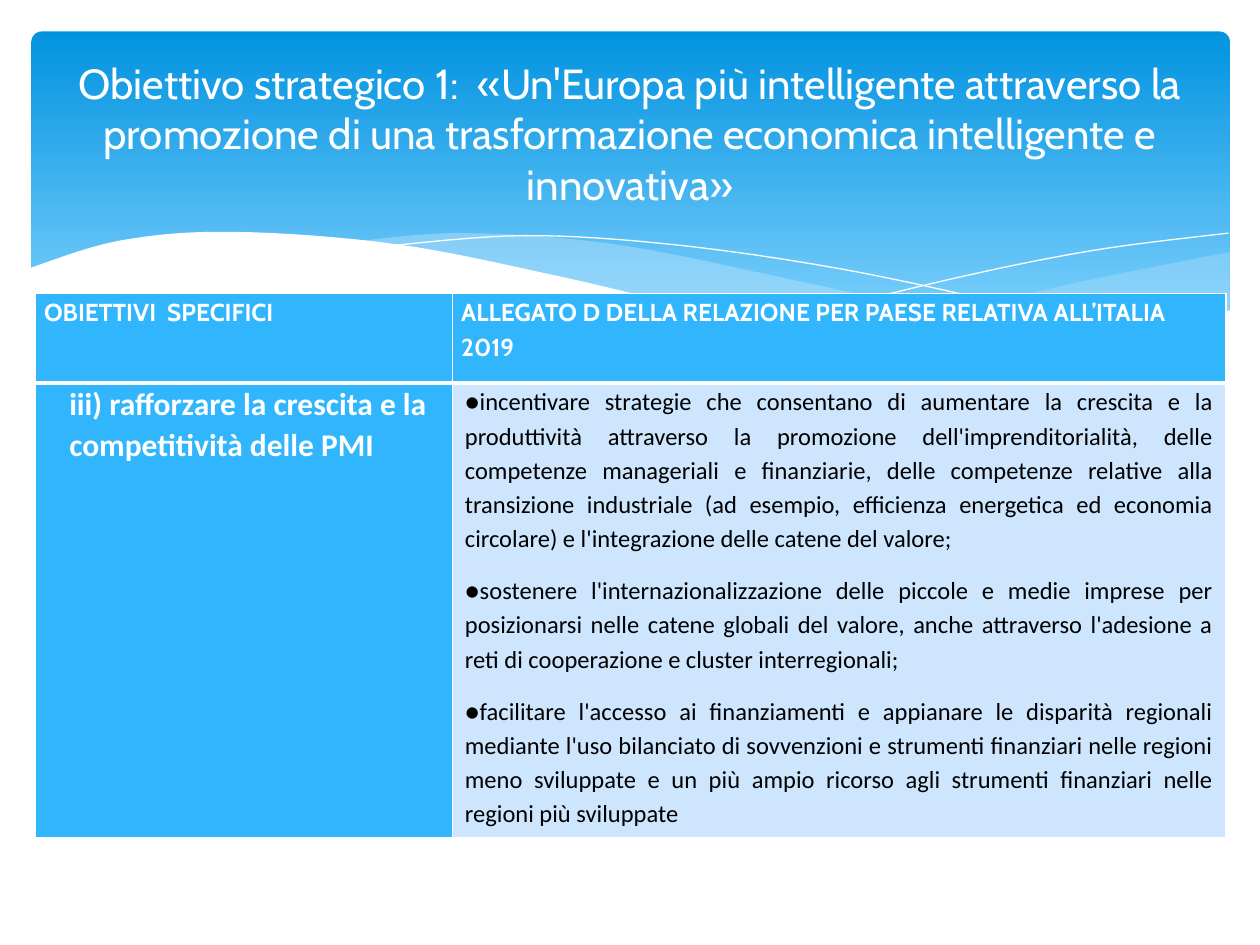
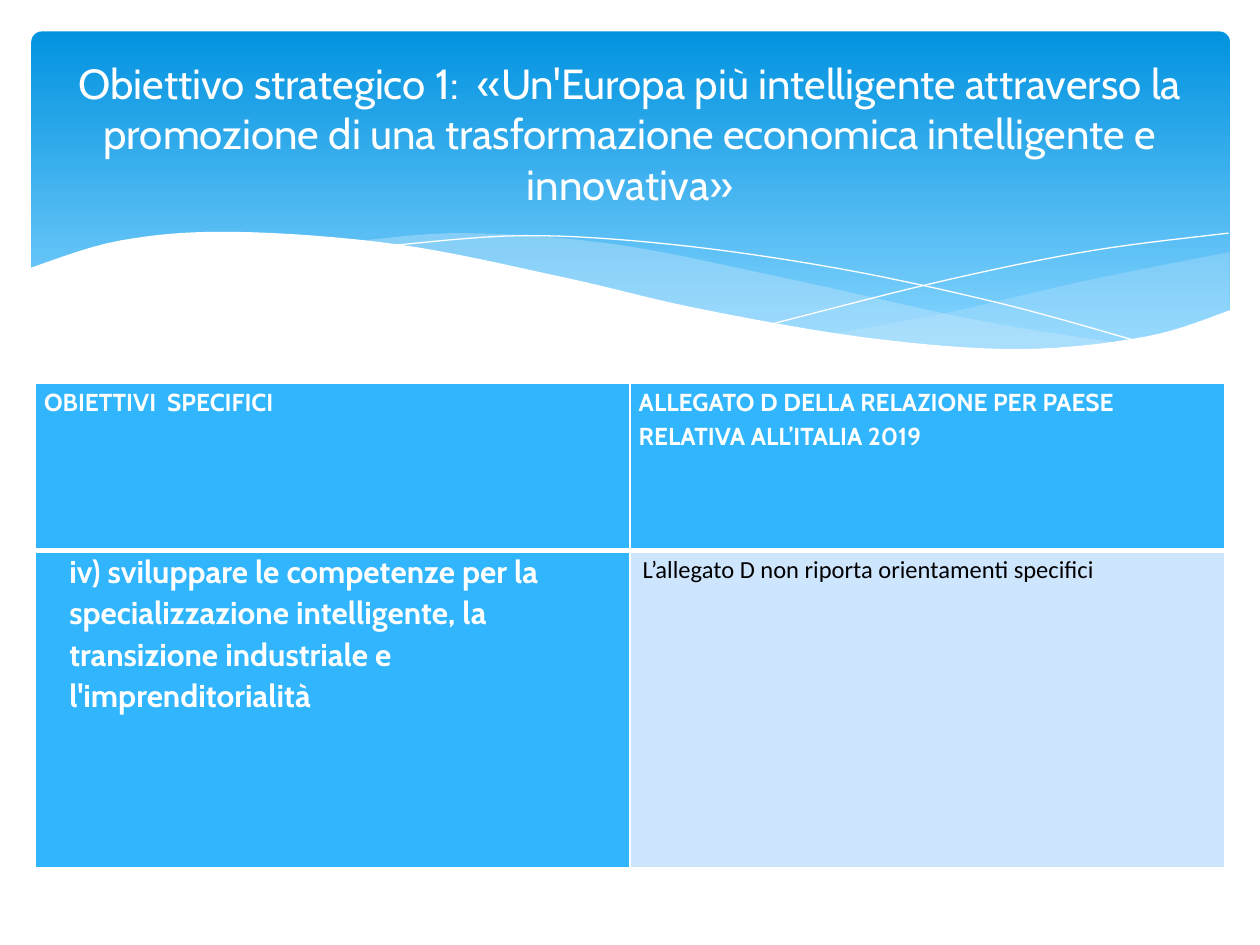
import dataclasses
import typing

import lxml.etree
import pptx
import pptx.dml.color
import pptx.enum.shapes
import pptx.enum.text
import pptx.oxml.ns
import pptx.slide
import pptx.util

Inches = pptx.util.Inches
Pt = pptx.util.Pt
qn = pptx.oxml.ns.qn
ALIGN = pptx.enum.text.PP_ALIGN
Spot = tuple[float, float]

WHITE, BLACK = "FFFFFF", "000000"
BLUE, PALE, MIST = "31B6FD", "CEE5FE", "C6E7FC"
DEEP, SKY = "0293E0", "83D3FE"
HEAD_FONT, BODY_FONT = "Cabin", "Calibri"
TITLE = ("Obiettivo strategico 1:  «Un'Europa più intelligente attraverso la "
         "promozione di una trasformazione economica intelligente e innovativa»")
HEADS = ("OBIETTIVI  SPECIFICI",
         "ALLEGATO D DELLA RELAZIONE PER PAESE RELATIVA ALL’ITALIA 2019")


@dataclasses.dataclass(frozen=True)
class Wave:
    points: list[Spot]
    fill: str | None = None
    alpha: int = 100


@dataclasses.dataclass(frozen=True)
class Style:
    size: int
    font: str
    color: str
    bold: bool = False
    align: typing.Any = ALIGN.LEFT
    space: float = 1.0
    after: int = 0


@dataclasses.dataclass(frozen=True)
class Look:
    style: Style
    fill: str
    left: float
    right: float
    top: int
    bottom: int


@dataclasses.dataclass(frozen=True)
class Page:
    top: float
    cols: Spot
    rows: Spot
    goal: str
    goal_font: str
    notes: tuple[str, ...]


def curve(*knots: Spot, steps: int = 8) -> list[Spot]:
    ends = (knots[0], *knots, knots[-1])
    spots = [knots[0]]
    for a, b, c, d in zip(ends, ends[1:], ends[2:], ends[3:]):
        for step in range(1, steps + 1):
            t = step / steps
            x, y = (q + t / 2 * (r - p + t * (2 * p - 5 * q + 4 * r - s
                                              + t * (3 * (q - r) + s - p)))
                    for p, q, r, s in zip(a, b, c, d))
            spots.append((x, y))
    return spots


EDGE = curve((9.77, 2.46), (9.1, 2.67), (8.09, 2.77), (6.88, 2.68), (5.55, 2.45),
             (4.47, 2.2), (3.16, 1.94), (1.85, 1.84), (0.95, 1.91), (0.23, 2.13))


def veil(*knots: Spot) -> list[Spot]:
    hem = [spot for spot in reversed(EDGE) if knots[-1][0] < spot[0] < knots[0][0]]
    return curve(*knots) + hem


WAVES = (
    Wave([(9.76, 2.47)] + veil((9.76, 2), (8.61, 2.23), (7.53, 2.48), (6.61, 2.65)),
         MIST, 29),
    Wave(veil((8.93, 2.73), (7.75, 2.54), (6.29, 2.22), (4.89, 1.94), (3.7, 1.85),
              (2.86, 1.91)), MIST, 40),
    Wave(curve((3.09, 1.95), (4.16, 1.87), (5.33, 1.94), (6.65, 2.13),
               (7.95, 2.41), (9.07, 2.72))),
    Wave(curve((6.13, 2.57), (7.48, 2.23), (8.66, 1.99), (9.75, 1.85))),
    Wave(EDGE + [(0.23, 3.29), (9.77, 3.29)], WHITE),
)

TITLE_STYLE = Style(24, HEAD_FONT, WHITE, align=ALIGN.CENTER)
HEAD = Look(Style(14, HEAD_FONT, WHITE, True, space=1.15), BLUE, 0.07, 0.07, 1, 3)
GOAL = Look(Style(18, BODY_FONT, WHITE, True, space=1.07, after=8),
            BLUE, 0.27, 0.07, 3, 1)
NOTE = Look(Style(14, BODY_FONT, BLACK, align=ALIGN.JUSTIFY, space=1.15, after=10),
            PALE, 0.1, 0.1, 3, 1)

PAGES = (
    Page(2.33, (3.31, 6.14), (0.71, 3.61),
         "iii) rafforzare la crescita e la competitività delle PMI", BODY_FONT,
         ("●incentivare strategie che consentano di aumentare la crescita e la "
          "produttività attraverso la promozione dell'imprenditorialità, delle "
          "competenze manageriali e finanziarie, delle competenze relative alla "
          "transizione industriale (ad esempio, efficienza energetica ed economia "
          "circolare) e l'integrazione delle catene del valore;",
          "●sostenere l'internazionalizzazione delle piccole e medie imprese per "
          "posizionarsi nelle catene globali del valore, anche attraverso "
          "l'adesione a reti di cooperazione e cluster interregionali;",
          "●facilitare l'accesso ai finanziamenti e appianare le disparità "
          "regionali mediante l'uso bilanciato di sovvenzioni e strumenti "
          "finanziari nelle regioni meno sviluppate e un più ampio ricorso agli "
          "strumenti finanziari nelle regioni più sviluppate")),
    Page(3.04, (4.72, 4.72), (1.33, 2.52),
         "iv) sviluppare le competenze per la specializzazione intelligente, la "
         "transizione industriale e l'imprenditorialità", HEAD_FONT,
         ("L’allegato D non riporta orientamenti specifici",)),
)


def tint(code: str) -> pptx.dml.color.RGBColor:
    return pptx.dml.color.RGBColor.from_string(code)


def put(item: typing.Any, values: dict[str, typing.Any]) -> None:
    for name, value in values.items():
        setattr(item, name, value)


def paint(item: typing.Any, code: str) -> None:
    item.fill.solid()
    item.fill.fore_color.rgb = tint(code)


def write(frame: typing.Any, texts: typing.Sequence[str], style: Style) -> None:
    frame.text = "\n".join(texts)
    for para in frame.paragraphs:
        put(para, {"alignment": style.align, "line_spacing": style.space,
                   "space_before": Pt(0), "space_after": Pt(style.after)})
        for run in para.runs:
            put(run.font, {"size": Pt(style.size), "name": style.font,
                           "bold": style.bold})
            run.font.color.rgb = tint(style.color)


def draw_band(slide: pptx.slide.Slide) -> None:
    band = slide.shapes.add_shape(
        pptx.enum.shapes.MSO_SHAPE.ROUNDED_RECTANGLE,
        Inches(0.25), Inches(0.25), Inches(9.51), Inches(2.7))
    band.adjustments[0] = 0.03
    band.shadow.inherit = False
    band.line.fill.background()
    band.fill.gradient()
    band.fill.gradient_angle = 270
    for stop, code, place in zip(band.fill.gradient_stops, (DEEP, SKY), (0, 0.9)):
        stop.color.rgb = tint(code)
        stop.position = place


def draw_wave(slide: pptx.slide.Slide, wave: Wave) -> None:
    spots = [(Inches(x), Inches(y)) for x, y in wave.points]
    pen = slide.shapes.build_freeform(*spots[0])
    pen.add_line_segments(spots[1:], close=wave.fill is not None)
    shape = pen.convert_to_shape()
    shape.shadow.inherit = False
    if wave.fill is None:
        shape.fill.background()
        shape.line.color.rgb = tint(WHITE)
        shape.line.width = Pt(0)
        return
    paint(shape, wave.fill)
    shape.line.fill.background()
    if wave.alpha < 100:
        color = shape.element.spPr.find(qn("a:solidFill")).find(qn("a:srgbClr"))
        lxml.etree.SubElement(color, qn("a:alpha"), val=str(wave.alpha * 1000))


def share_back(slide: pptx.slide.Slide, layout: pptx.slide.SlideLayout) -> None:
    for holder in list(layout.placeholders)[1:]:
        layout.shapes.element.remove(holder.element)
    draw_band(slide)
    for wave in WAVES:
        draw_wave(slide, wave)
    for shape in list(slide.shapes):
        if not shape.is_placeholder:
            layout.shapes.element.append(shape.element)


def edge(cell: typing.Any, side: str, width: int) -> None:
    line = lxml.etree.SubElement(cell._tc.get_or_add_tcPr(), qn(f"a:ln{side}"),
                                 w=str(int(Pt(width))))
    fill = lxml.etree.SubElement(line, qn("a:solidFill"))
    lxml.etree.SubElement(fill, qn("a:srgbClr"), val=WHITE)


def fill_cell(cell: typing.Any, texts: typing.Sequence[str], look: Look) -> None:
    put(cell, {"margin_left": Inches(look.left), "margin_right": Inches(look.right),
               "margin_top": Inches(0), "margin_bottom": Inches(0)})
    for side, width in zip("LRTB", (1, 1, look.top, look.bottom)):
        edge(cell, side, width)
    paint(cell, look.fill)
    write(cell.text_frame, texts, look.style)


def draw_table(slide: pptx.slide.Slide, page: Page) -> None:
    table = slide.shapes.add_table(
        2, 2, Inches(0.28), Inches(page.top),
        Inches(sum(page.cols)), Inches(sum(page.rows))).table
    for col, width in zip(table.columns, page.cols):
        col.width = Inches(width)
    for row, height in zip(table.rows, page.rows):
        row.height = Inches(height)
    for col, text in enumerate(HEADS):
        fill_cell(table.cell(0, col), (text,), HEAD)
    style = dataclasses.replace(GOAL.style, font=page.goal_font)
    fill_cell(table.cell(1, 0), (page.goal,), dataclasses.replace(GOAL, style=style))
    fill_cell(table.cell(1, 1), page.notes, NOTE)


def set_title(slide: pptx.slide.Slide) -> None:
    title = slide.shapes.title
    put(title, {"left": Inches(0.5), "top": Inches(0.37),
                "width": Inches(9), "height": Inches(1.37)})
    put(title.text_frame, {"word_wrap": True,
                           "auto_size": pptx.enum.text.MSO_AUTO_SIZE.NONE,
                           "vertical_anchor": pptx.enum.text.MSO_ANCHOR.MIDDLE})
    write(title.text_frame, (TITLE,), TITLE_STYLE)


def main() -> None:
    deck = pptx.Presentation()
    put(deck, {"slide_width": Inches(10), "slide_height": Inches(7.5)})
    layout = deck.slide_layouts[5]
    for index, page in enumerate(PAGES):
        slide = deck.slides.add_slide(layout)
        if index == 0:
            share_back(slide, layout)
        set_title(slide)
        draw_table(slide, page)
    deck.save("out.pptx")


if __name__ == "__main__":
    main()
